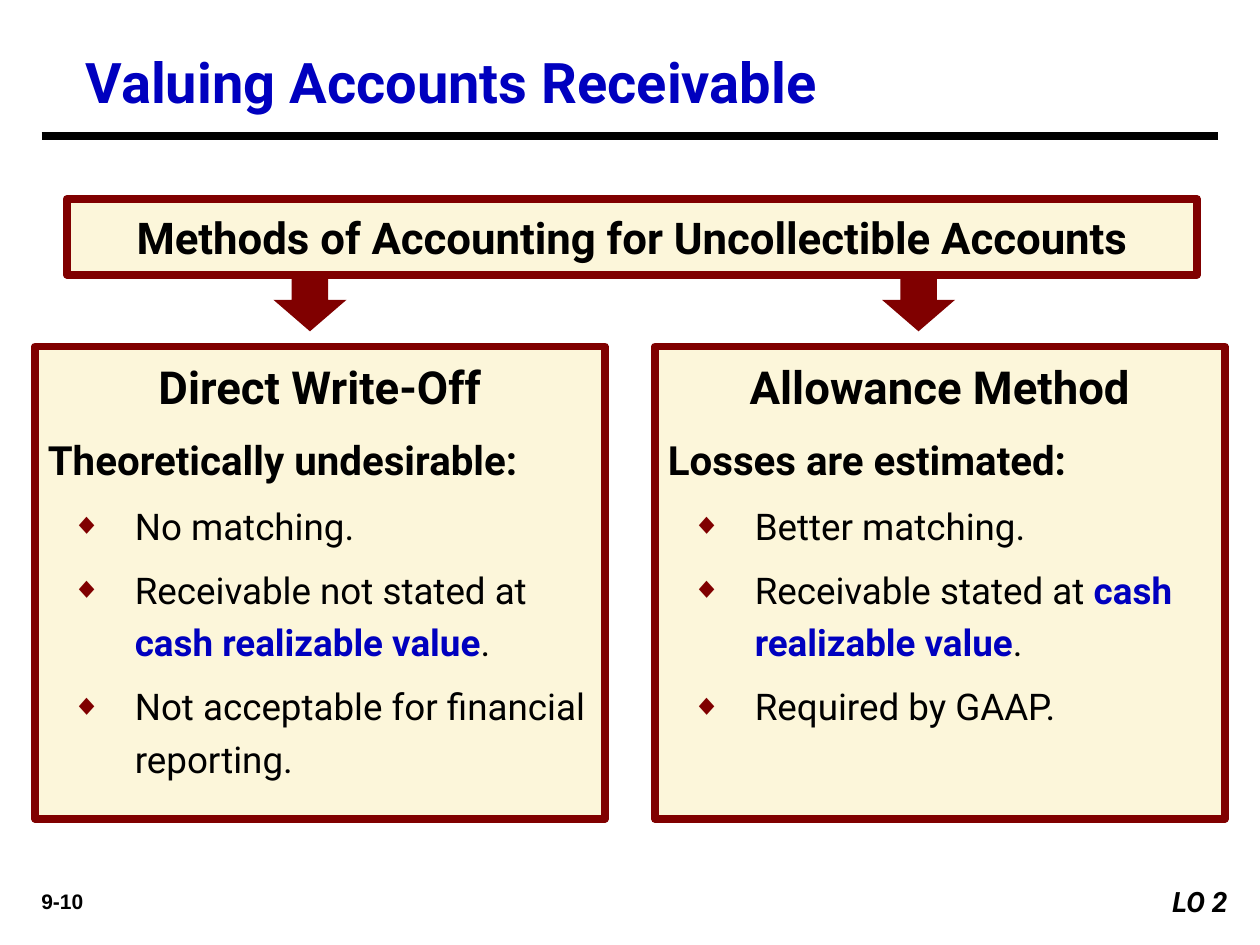
"""Build the slide comparing two methods of accounting for uncollectible accounts."""
import lxml.etree
import pptx
import pptx.dml.color
import pptx.enum.shapes
import pptx.enum.text
import pptx.oxml.ns
import pptx.util

Inches = pptx.util.Inches
Pt = pptx.util.Pt
ALIGN = pptx.enum.text.PP_ALIGN
SHAPE = pptx.enum.shapes.MSO_SHAPE
qn = pptx.oxml.ns.qn

TITLE = "Valuing Accounts Receivable"
BANNER = "Methods of Accounting for Uncollectible Accounts"
PAGE_NUMBER = "9-10"
OBJECTIVE = "LO 2"
KEY_TERM = "cash realizable value"
METHODS = [
    {
        "name": "Direct Write-Off",
        "verdict": "Theoretically undesirable:",
        "points": [
            ["No matching."],
            ["Receivable not stated at ", KEY_TERM, "."],
            ["Not acceptable for financial reporting."],
        ],
    },
    {
        "name": "Allowance Method",
        "verdict": "Losses are estimated:",
        "points": [
            ["Better matching."],
            ["Receivable stated at ", KEY_TERM, "."],
            ["Required by GAAP."],
        ],
    },
]
THEME = {
    "font": "Roboto", "number_font": "Arial",
    "ink": "000000", "accent": "0000BF", "frame": "800000",
    "panel": "FCF6DA", "paper": "FFFFFF",
    "title": 32, "name": 26, "banner": 25, "verdict": 23,
    "point": 21, "objective": 16, "number": 12, "rule": 4.5,
}
PANEL_LEFT, PANEL_TOP, PANEL_WIDTH, PANEL_HEIGHT = 0.28, 2.75, 4.52, 3.75
PANEL_STEP = 4.92
ARROW_LEFT, ARROW_TOP, ARROW_WIDTH, ARROW_HEIGHT = 2.17, 2.13, 0.58, 0.5
ARROW_STEP = 4.83


def color(name):
    return pptx.dml.color.RGBColor.from_string(THEME[name])


def place(shape, left, top, width, height):
    shape.left, shape.top = Inches(left), Inches(top)
    shape.width, shape.height = Inches(width), Inches(height)


def paint(shape, fill, line=None):
    shape.fill.solid()
    shape.fill.fore_color.rgb = color(fill)
    if line:
        shape.line.color.rgb = color(line)
        shape.line.width = Pt(THEME["rule"])
    else:
        shape.line.fill.background()


def prepare(shape, top_inset=0.05):
    frame = shape.text_frame
    frame.word_wrap = True
    frame.auto_size = pptx.enum.text.MSO_AUTO_SIZE.NONE
    frame.vertical_anchor = pptx.enum.text.MSO_ANCHOR.TOP
    frame.margin_left = frame.margin_right = Inches(0.1)
    frame.margin_top, frame.margin_bottom = Inches(top_inset), Inches(0.05)
    return frame


def write(paragraph, text, size, ink="ink", bold=True, italic=False, font="font"):
    run = paragraph.add_run()
    run.text = text
    run.font.name = THEME[font]
    run.font.size = Pt(THEME[size])
    run.font.bold, run.font.italic = bold, italic
    run.font.color.rgb = color(ink)


def arrange(paragraph, size, before, align=ALIGN.LEFT, spacing=1.0):
    paragraph.alignment = align
    paragraph.line_spacing = spacing
    paragraph.space_before = Pt(round(THEME[size] * before, 1))
    paragraph.space_after = Pt(0)


def set_bullet(paragraph, shown):
    properties = paragraph._p.get_or_add_pPr()
    properties.set("marL", str(Inches(0.69 if shown else 0)))
    properties.set("indent", str(Inches(-0.5 if shown else 0)))
    if not shown:
        lxml.etree.SubElement(properties, qn("a:buNone"))
        return
    tint = lxml.etree.SubElement(properties, qn("a:buClr"))
    lxml.etree.SubElement(tint, qn("a:srgbClr"), val=THEME["frame"])
    lxml.etree.SubElement(properties, qn("a:buSzPct"), val="80000")
    lxml.etree.SubElement(properties, qn("a:buFont"), typeface=THEME["number_font"])
    lxml.etree.SubElement(properties, qn("a:buChar"), char="◆")


def fill_panel(panel, method):
    paint(panel, "panel", "frame")
    frame = prepare(panel, 0.1)
    name = frame.paragraphs[0]
    arrange(name, "name", 0.2, ALIGN.CENTER)
    set_bullet(name, False)
    write(name, method["name"], "name")
    verdict = frame.add_paragraph()
    arrange(verdict, "verdict", 0.3, spacing=1.2)
    set_bullet(verdict, False)
    write(verdict, method["verdict"], "verdict")
    for pieces in method["points"]:
        point = frame.add_paragraph()
        point.level = 1
        arrange(point, "point", 0.3, spacing=1.2)
        set_bullet(point, True)
        for piece in pieces:
            key = piece == KEY_TERM
            write(point, piece, "point", "accent" if key else "ink", key)


def add_block(slide, kind, box, fill, line=None):
    block = slide.shapes.add_shape(kind, *map(Inches, box))
    block.shadow.inherit = False
    paint(block, fill, line)
    return block


def main():
    deck = pptx.Presentation()
    deck.slide_width, deck.slide_height = Inches(10), Inches(7.5)
    slide = deck.slides.add_slide(deck.slide_layouts.get_by_name("Two Content"))

    title = slide.shapes.title
    place(title, 0.58, 0.33, 9, 0.61)
    heading = prepare(title).paragraphs[0]
    heading.alignment = ALIGN.LEFT
    write(heading, TITLE, "title", "accent")

    rule = slide.shapes.add_connector(
        pptx.enum.shapes.MSO_CONNECTOR.STRAIGHT,
        Inches(0.33), Inches(1.08), Inches(9.67), Inches(1.08))
    rule.line.color.rgb = color("ink")
    rule.line.width = Pt(THEME["rule"])
    lxml.etree.SubElement(rule._element.spPr, qn("a:effectLst"))

    for index, method in enumerate(METHODS):
        panel = slide.placeholders[index + 1]
        place(panel, PANEL_LEFT + index * PANEL_STEP, PANEL_TOP, PANEL_WIDTH, PANEL_HEIGHT)
        fill_panel(panel, method)
        add_block(slide, SHAPE.DOWN_ARROW,
                  (ARROW_LEFT + index * ARROW_STEP, ARROW_TOP, ARROW_WIDTH, ARROW_HEIGHT),
                  "frame")

    banner = add_block(slide, SHAPE.RECTANGLE, (0.53, 1.58, 8.97, 0.6), "panel", "frame")
    methods_line = prepare(banner, 0.09).paragraphs[0]
    arrange(methods_line, "banner", 0.2, ALIGN.CENTER)
    write(methods_line, BANNER, "banner")

    page_number = slide.shapes.add_textbox(*map(Inches, (0.08, 7, 0.83, 0.3)))
    number_line = prepare(page_number).paragraphs[0]
    arrange(number_line, "number", 0.5, ALIGN.CENTER)
    write(number_line, PAGE_NUMBER, "number", font="number_font")

    objective = add_block(slide, SHAPE.RECTANGLE, (8.92, 6.97, 0.92, 0.37), "paper")
    objective_line = prepare(objective).paragraphs[0]
    arrange(objective_line, "objective", 0.5, ALIGN.RIGHT)
    write(objective_line, OBJECTIVE, "objective", italic=True)

    deck.save("out.pptx")


if __name__ == "__main__":
    main()
